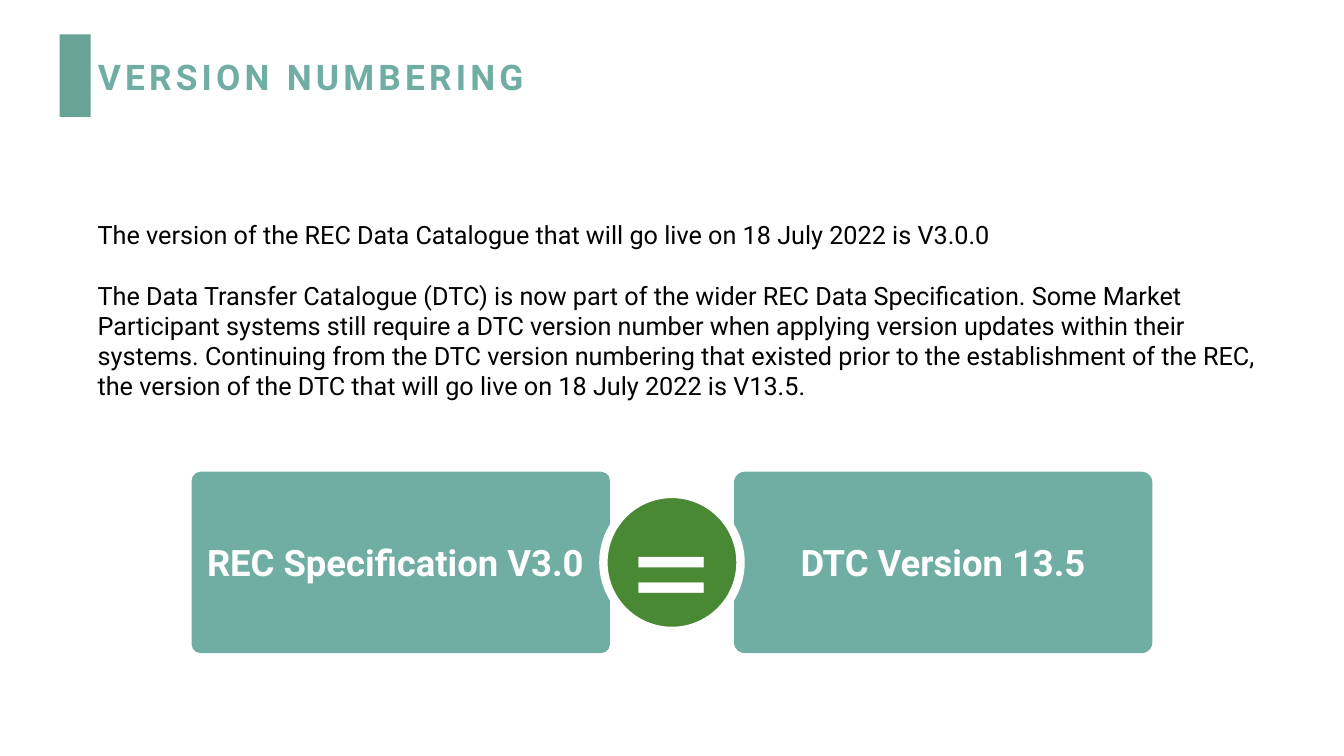
"""Build the version numbering slide."""
from pptx import Presentation
from pptx.dml.color import RGBColor
from pptx.enum.shapes import MSO_SHAPE as Shape
from pptx.enum.text import MSO_ANCHOR as Anchor, PP_ALIGN as Align
from pptx.util import Inches, Pt

TITLE = "VERSION NUMBERING"
EXPLANATION = [
    "The version of the REC Data Catalogue that will go live on 18 July 2022 is V3.0.0",
    "The Data Transfer Catalogue (DTC) is now part of the wider REC Data Specification. "
    "Some Market Participant systems still require a DTC version number when applying "
    "version updates within their systems. Continuing from the DTC version numbering that "
    "existed prior to the establishment of the REC, the version of the DTC that will go "
    "live on 18 July 2022 is V13.5.",
]
VERSIONS = [("REC Specification V3.0", 0.05, 0.2), ("DTC Version 13.5", 0.06, 0.1)]
COLOURS = {"accent": "68A495", "teal": "70ADA3", "green": "498934",
           "white": "FFFFFF", "black": "000000"}

WIDTH, HEIGHT = 13.33, 7.5
MARGIN, TEXT_WIDTH = 0.87, 11.75
CARD_LEFT, CARD_TOP, CARD_WIDTH, CARD_HEIGHT, CARD_GAP = 1.9, 4.68, 4.15, 1.8, 1.23
CIRCLE = 1.36


def colour(name):
    return RGBColor.from_string(COLOURS[name])


def place(item, left, top, width, height):
    sides = {"left": left, "top": top, "width": width, "height": height}
    for side, length in sides.items():
        setattr(item, side, Inches(length))


def write(paragraph, text, ink, size, name="Roboto", bold=False):
    run = paragraph.add_run()
    run.text = text
    for key, value in {"name": name, "size": Pt(size), "bold": bold}.items():
        setattr(run.font, key, value)
    run.font.color.rgb = colour(ink)
    return run


def add_block(slide, preset, box, fill):
    block = slide.shapes.add_shape(preset, *map(Inches, box))
    block.shadow.inherit = False
    block.fill.solid()
    block.fill.fore_color.rgb = colour(fill)
    block.line.fill.background()
    return block


def add_label(block, text, size, insets, **font):
    frame = block.text_frame
    frame.word_wrap = True
    frame.vertical_anchor = Anchor.MIDDLE
    for side, inset in zip(("left", "top", "right", "bottom"), insets):
        setattr(frame, "margin_" + side, Inches(inset))
    frame.paragraphs[0].alignment = Align.CENTER
    write(frame.paragraphs[0], text, "white", size, **font)


def add_title(slide):
    title = slide.shapes.title
    place(title, MARGIN, 0.42, 10.15, 0.72)
    frame = title.text_frame
    frame.vertical_anchor = Anchor.MIDDLE
    heading = frame.paragraphs[0]
    heading.alignment = Align.LEFT
    heading.line_spacing = 0.9
    run = write(heading, TITLE, "teal", 25.2, bold=True)
    run.font._element.set("spc", "300")


def add_explanation(slide):
    box = map(Inches, (MARGIN, 2.13, TEXT_WIDTH, 2.1))
    frame = slide.shapes.add_textbox(*box).text_frame
    frame.word_wrap = True
    for index, text in enumerate(EXPLANATION):
        paragraph = frame.add_paragraph() if index else frame.paragraphs[0]
        if index:
            paragraph.space_before = Pt(21.5)
        write(paragraph, text, "black", 18)


def add_equation(slide):
    for index, (text, corner, right_inset) in enumerate(VERSIONS):
        left = CARD_LEFT + index * (CARD_WIDTH + CARD_GAP)
        card = add_block(slide, Shape.ROUNDED_RECTANGLE,
                         (left, CARD_TOP, CARD_WIDTH, CARD_HEIGHT), "teal")
        card.adjustments[0] = corner
        add_label(card, text, 26, (0.1, 0.1, right_inset, 0.1), bold=True)
    centre = CARD_LEFT + CARD_WIDTH + CARD_GAP / 2
    circle = add_block(slide, Shape.OVAL,
                       (centre - CIRCLE / 2, 4.9, CIRCLE, CIRCLE), "green")
    circle.line.color.rgb = colour("white")
    circle.line.width = Pt(6)
    add_label(circle, "=", 115, (0, 0, 0, 0), name="Calibri")


def main():
    deck = Presentation()
    deck.slide_width, deck.slide_height = Inches(WIDTH), Inches(HEIGHT)
    slide = deck.slides.add_slide(deck.slide_layouts.get_by_name("Title Only"))
    add_block(slide, Shape.RECTANGLE, (0.59, 0.34, 0.31, 0.82), "accent")
    add_title(slide)
    add_explanation(slide)
    add_equation(slide)
    deck.save("out.pptx")


if __name__ == "__main__":
    main()
